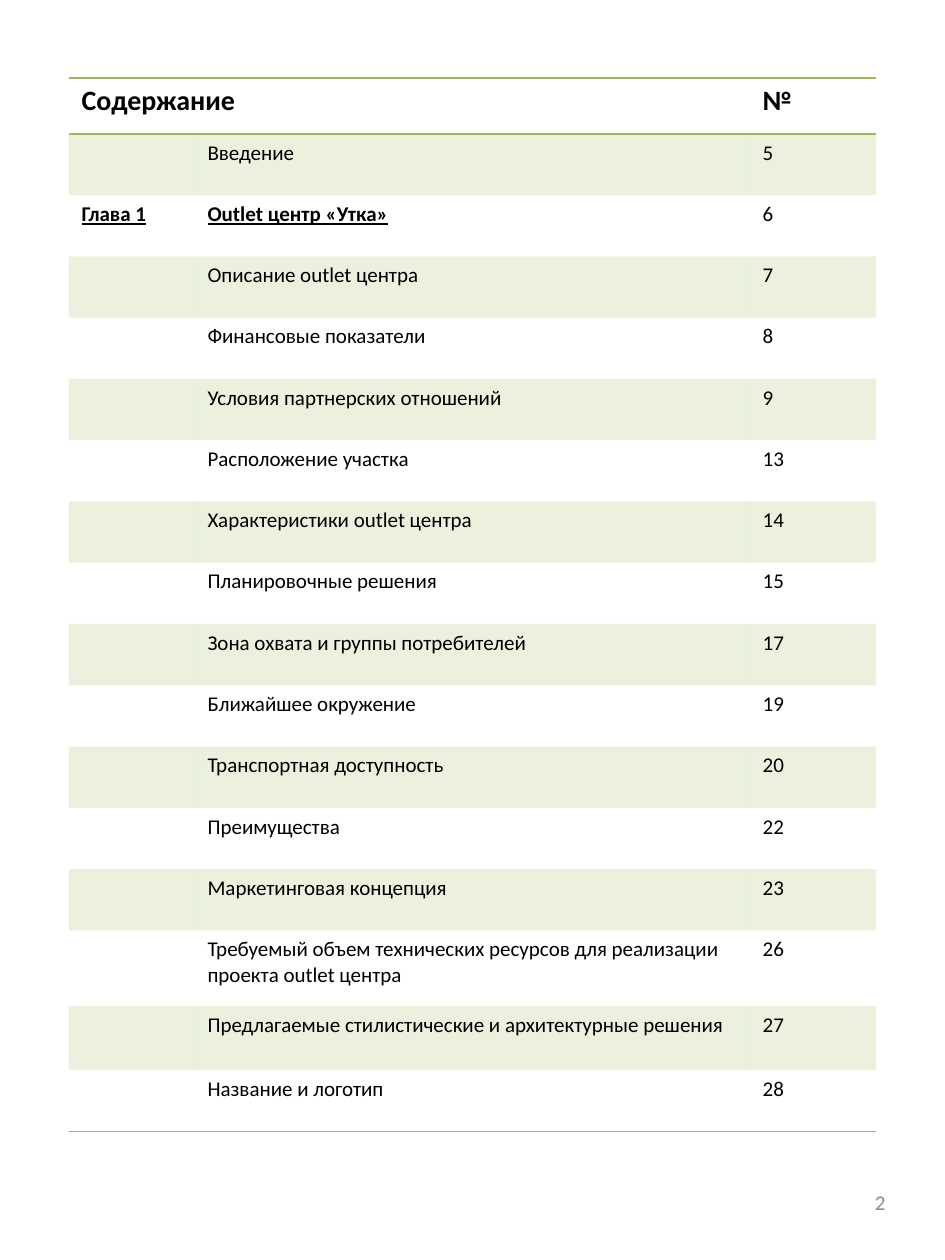
"""Build the contents page: a banded table of sections and a page number."""
import pptx
import pptx.dml.color
import pptx.enum.dml
import pptx.enum.text
import pptx.oxml
import pptx.oxml.ns
import pptx.util
from dataclasses import dataclass
from lxml import etree

Cm = pptx.util.Cm
Pt = pptx.util.Pt
Color = pptx.dml.color.RGBColor.from_string
qn = pptx.oxml.ns.qn


@dataclass
class Theme:
    font: str = "Calibri"
    ink: str = "000000"
    green: str = "9BBB59"
    gray: str = "8C8C8C"
    alpha: int = 20000
    head: int = 16
    body: int = 12


theme = Theme()


def style(frame, size, color, bold=False, under=False):
    for run in frame.paragraphs[0].runs:
        run.font.name = theme.font
        run.font.size = Pt(size)
        run.font.color.rgb = Color(color)
        run.font.bold = bold
        run.font.underline = under


def rule(cell, side):
    line = pptx.oxml.parse_xml(
        f'<a:{side} {pptx.oxml.ns.nsdecls("a")} w="12700"><a:solidFill>'
        f'<a:srgbClr val="{theme.green}"/></a:solidFill></a:{side}>')
    cell._tc.get_or_add_tcPr().insert(0, line)


rows = [
    ("Содержание", "", "№"),
    ("", "Введение", "5"),
    ("Глава 1", "Outlet центр «Утка»", "6"),
    ("", "Описание outlet центра", "7"),
    ("", "Финансовые показатели", "8"),
    ("", "Условия партнерских отношений", "9"),
    ("", "Расположение участка", "13"),
    ("", "Характеристики outlet центра", "14"),
    ("", "Планировочные решения", "15"),
    ("", "Зона охвата и группы потребителей", "17"),
    ("", "Ближайшее окружение", "19"),
    ("", "Транспортная доступность", "20"),
    ("", "Преимущества", "22"),
    ("", "Маркетинговая концепция", "23"),
    ("", "Требуемый объем технических ресурсов для реализации проекта outlet центра", "26"),
    ("", "Предлагаемые стилистические и архитектурные решения", "27"),
    ("", "Название и логотип", "28"),
]
widths = [2.54, 11.19, 2.54]
high = {0: 1.13, 14: 1.53, 15: 1.29}
last = len(rows) - 1

deck = pptx.Presentation()
deck.slide_width = Cm(19.05)
deck.slide_height = Cm(25.4)
slide = deck.slides.add_slide(deck.slide_layouts[6])

tall = [high.get(i, 1.235) for i in range(len(rows))]
frame = slide.shapes.add_table(len(rows), 3, Cm(1.39), Cm(1.57),
                               Cm(sum(widths)), Cm(sum(tall)))
table = frame.table
table.first_row = False
table.horz_banding = False
table._tbl.tblPr[0].text = "{2D5ABB26-0587-4C30-8999-92F81FD0307C}"
for col, width in zip(table.columns, widths):
    col.width = Cm(width)

for i, row in enumerate(rows):
    table.rows[i].height = Cm(tall[i])
    for j, text in enumerate(row):
        cell = table.cell(i, j)
        if text:
            cell.text_frame.text = text
        part = row[0] != "" and i > 0 and j < 2
        style(cell.text_frame, theme.body if i else theme.head, theme.ink,
              bold=i == 0 or part, under=part)
        if i % 2:
            cell.fill.solid()
            cell.fill.fore_color.rgb = Color(theme.green)
            tint = cell._tc.tcPr.find(".//" + qn("a:srgbClr"))
            etree.SubElement(tint, qn("a:alpha"), val=str(theme.alpha))
        else:
            cell.fill.background()
        if i in (0, last):
            rule(cell, "lnB")
        if i == 0:
            rule(cell, "lnT")
table.cell(0, 0).merge(table.cell(0, 1))

page = slide.shapes.add_textbox(Cm(13.65), Cm(23.55), Cm(4.45), Cm(1.35))
page.text_frame.word_wrap = True
page.text_frame.vertical_anchor = pptx.enum.text.MSO_ANCHOR.MIDDLE
page.text_frame.text = "2"
page.text_frame.paragraphs[0].alignment = pptx.enum.text.PP_ALIGN.RIGHT
style(page.text_frame, theme.body, theme.gray)

deck.save("out.pptx")
